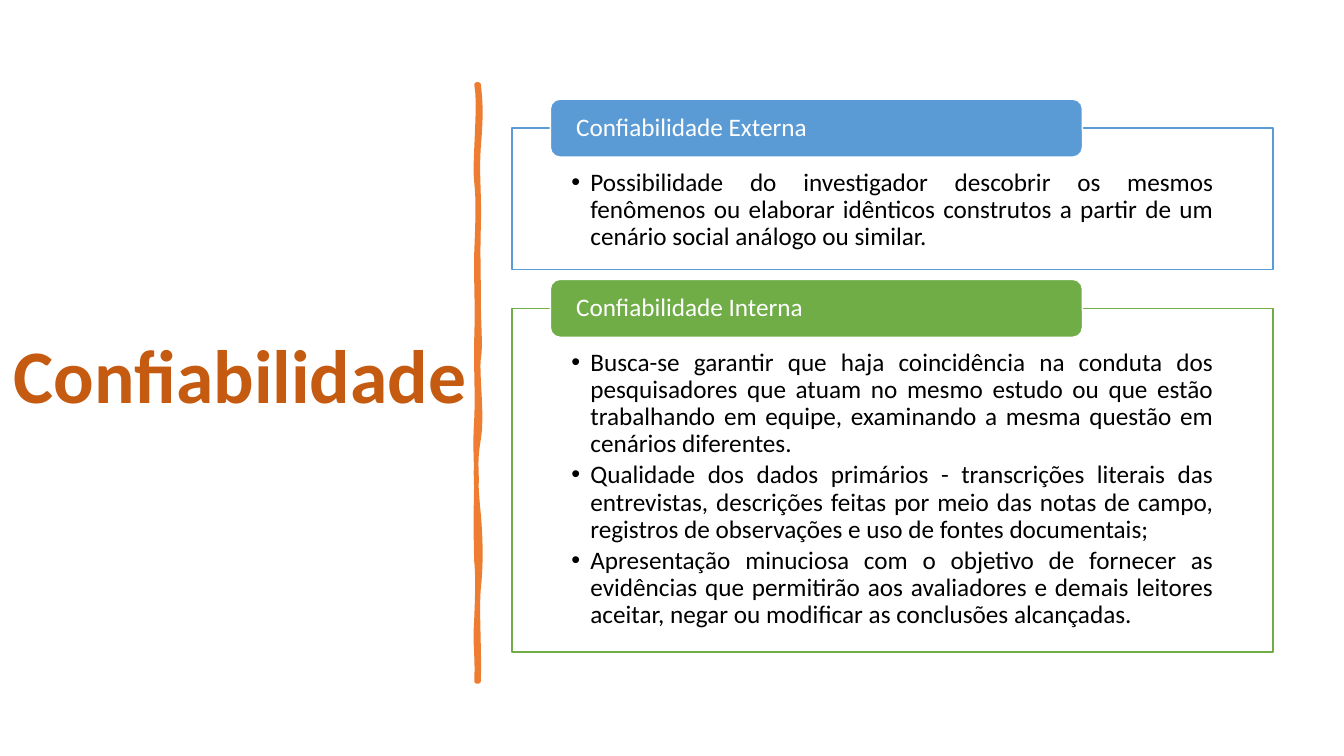
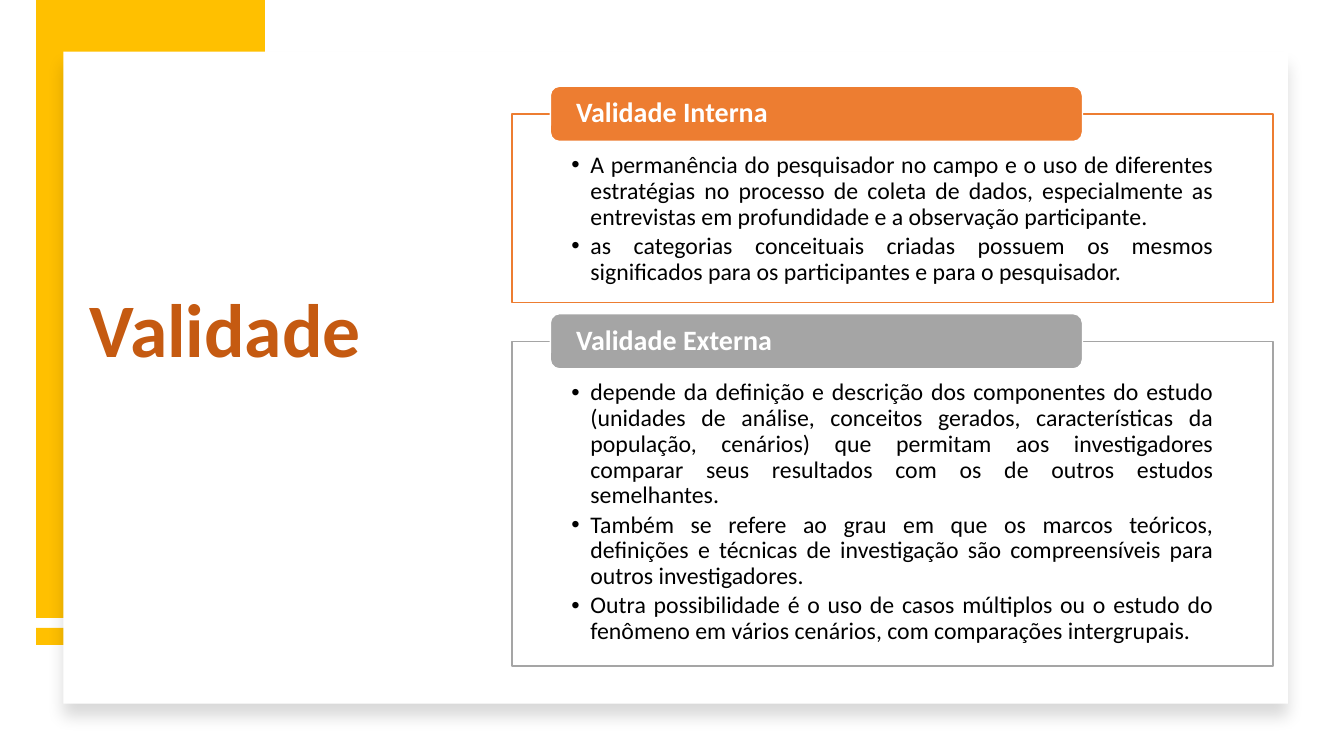
from lxml import etree
from pptx import Presentation
from pptx.dml.color import RGBColor
from pptx.enum.shapes import MSO_SHAPE
from pptx.enum.text import MSO_ANCHOR, PP_ALIGN
from pptx.oxml.ns import qn
from pptx.util import Cm, Pt

RECT, ROUNDED = MSO_SHAPE.RECTANGLE, MSO_SHAPE.ROUNDED_RECTANGLE
TOP, MIDDLE = MSO_ANCHOR.TOP, MSO_ANCHOR.MIDDLE
LEFT, JUSTIFY = PP_ALIGN.LEFT, PP_ALIGN.JUSTIFY

FONT = "Calibri"
WHITE, BLACK = "FFFFFF", "000000"
TITLE_COLOR = "C55A11"
ORANGE, BLUE, GREEN, GRAY, GOLD = "ED7D31", "5B9BD5", "70AD47", "A5A5A5", "FFC000"

# Panel geometry in centimetres
PANEL_LEFT, PANEL_WIDTH, PANEL_GAP = 12.9, 19.18, 0.98
LABEL_LEFT, LABEL_WIDTH = 13.87, 13.41

# Bézier control points (x, y) of the two edges of the brush stroke
STROKE_RIGHT = [
    (12.06, 2.13), (12.12, 2.59), (12.12, 3.02), (12.06, 3.71), (12.01, 4.39),
    (12.09, 4.95), (12.06, 5.74), (12.04, 6.53), (12.06, 6.65), (12.06, 7.47),
    (12.06, 8.26), (12.12, 8.69), (12.06, 9.04), (12.01, 9.4), (12.17, 10.52),
    (12.06, 11.07), (11.96, 11.61), (11.99, 12.29), (12.06, 12.95), (12.12, 13.61),
    (12.12, 14.33), (12.06, 14.83), (12.01, 15.32), (12.09, 16.51), (12.06, 17.17),
]
STROKE_LEFT = [
    (12.01, 17.17), (12.04, 16.41), (11.96, 16.36), (12.01, 15.57), (12.04, 14.81),
    (12.04, 14.48), (12.01, 14.15), (11.99, 13.82), (11.99, 12.57), (12.01, 12.12),
    (12.01, 11.66), (11.96, 11.3), (12.01, 10.54), (12.04, 9.8), (11.99, 9.47),
    (12.01, 8.51), (12.04, 7.57), (11.99, 7.14), (12.01, 6.35), (12.04, 5.54),
    (12.06, 5.08), (12.01, 4.6), (11.94, 4.14), (12.12, 2.64), (12.01, 2.13),
]


def rgb(value):
    return RGBColor.from_string(value)


def curve_points(controls, steps=8):
    """Points along a chain of cubic Bézier curves."""
    points = [controls[0]]
    for start in range(0, len(controls) - 1, 3):
        a, b, c, d = controls[start:start + 4]
        for step in range(1, steps + 1):
            t = step / steps
            weights = ((1 - t) ** 3, 3 * t * (1 - t) ** 2, 3 * t * t * (1 - t), t ** 3)
            points.append(tuple(
                sum(w * p[axis] for w, p in zip(weights, (a, b, c, d)))
                for axis in (0, 1)))
    return points


def write(shape, paragraphs, size, color=BLACK, bold=False, align=LEFT,
          anchor=MIDDLE, insets=(0.25, 0.13, 0.25, 0.13), after=0, bullet=False):
    frame = shape.text_frame
    frame.word_wrap = True
    frame.vertical_anchor = anchor
    (frame.margin_left, frame.margin_top,
     frame.margin_right, frame.margin_bottom) = map(Cm, insets)
    for index, text in enumerate(paragraphs):
        paragraph = frame.add_paragraph() if index else frame.paragraphs[0]
        paragraph.alignment = align
        paragraph.line_spacing = 0.9
        paragraph.space_after = Pt(after)
        run = paragraph.add_run()
        run.text = text
        run.font.name = FONT
        run.font.size = Pt(size)
        run.font.bold = bold
        run.font.color.rgb = rgb(color)
        if bullet:
            properties = paragraph.alignment is not None and run._r.getparent().get_or_add_pPr()
            properties.set("marL", str(Cm(0.48)))
            properties.set("indent", str(-Cm(0.48)))
            etree.SubElement(properties, qn("a:buFont"), typeface="Arial")
            etree.SubElement(properties, qn("a:buChar"), char="•")


class Deck:
    def __init__(self):
        self.presentation = Presentation()
        self.presentation.slide_width = Cm(33.87)
        self.presentation.slide_height = Cm(19.05)
        self.slide = None

    def new_slide(self):
        self.slide = self.presentation.slides.add_slide(self.presentation.slide_layouts[6])

    def style(self, shape, fill, line=None, width=1):
        shape.shadow.inherit = False
        shape.fill.solid()
        shape.fill.fore_color.rgb = rgb(fill)
        if line:
            shape.line.color.rgb = rgb(line)
            shape.line.width = Pt(width)
        else:
            shape.line.fill.background()
        return shape

    def block(self, left, top, width, height, fill, line=None, kind=RECT):
        shape = self.slide.shapes.add_shape(kind, Cm(left), Cm(top), Cm(width), Cm(height))
        return self.style(shape, fill, line)

    def title(self, text, left, top, width, height):
        box = self.slide.shapes.add_textbox(Cm(left), Cm(top), Cm(width), Cm(height))
        write(box, [text], 54, color=TITLE_COLOR, bold=True)

    def card(self, left, top, width, height):
        card = self.block(left, top, width, height, WHITE)
        effects = card._element.spPr.find(qn("a:effectLst"))
        shadow = etree.SubElement(effects, qn("a:outerShdw"), blurRad=str(Pt(11)),
                                  dist=str(Pt(10)), dir="5400000", rotWithShape="0")
        color = etree.SubElement(shadow, qn("a:srgbClr"), val=BLACK)
        etree.SubElement(color, qn("a:alpha"), val="15000")

    def brush_stroke(self):
        start, *rest = [(Cm(x), Cm(y)) for x, y in
                        curve_points(STROKE_RIGHT) + curve_points(STROKE_LEFT)]
        builder = self.slide.shapes.build_freeform(*start, scale=1.0)
        builder.add_line_segments(rest, close=True)
        self.style(builder.convert_to_shape(), ORANGE, ORANGE, 3.25)

    def panels(self, top, label_height, label_size, body_size, label_bold, sections):
        """Stack framed panels, each label centred on its frame's top edge."""
        for heading, color, height, points in sections:
            frame = self.block(PANEL_LEFT, top, PANEL_WIDTH, height, WHITE, color)
            solid = frame._element.spPr.find(qn("a:solidFill"))
            etree.SubElement(solid[0], qn("a:alpha"), val="90000")
            write(frame, points, body_size, align=JUSTIFY, anchor=TOP, bullet=True,
                  insets=(1.5, 0.71 * label_height, 1.5, 0.34), after=0.15 * body_size)
            label = self.block(LABEL_LEFT, top - label_height / 2, LABEL_WIDTH,
                               label_height, color, WHITE, ROUNDED)
            write(label, [heading], label_size, color=WHITE, bold=label_bold,
                  insets=(0.58, 0, 0.58, 0))
            top += height + PANEL_GAP


def reliability(deck):
    deck.new_slide()
    deck.title("Confiabilidade", 0.1, 1.78, 12.27, 15.52)
    deck.brush_stroke()
    deck.panels(3.23, 1.46, 18, 18, False, [
        ("Confiabilidade Externa", BLUE, 3.56, [
            "Possibilidade do investigador descobrir os mesmos fenômenos ou elaborar "
            "idênticos construtos a partir de um cenário social análogo ou similar.",
        ]),
        ("Confiabilidade Interna", GREEN, 8.66, [
            "Busca-se garantir que haja coincidência na conduta dos pesquisadores que "
            "atuam no mesmo estudo ou que estão trabalhando em equipe, examinando a "
            "mesma questão em cenários diferentes.",
            "Qualidade dos dados primários - transcrições literais das entrevistas, "
            "descrições feitas por meio das notas de campo, registros de observações e "
            "uso de fontes documentais;",
            "Apresentação minuciosa com o objetivo de fornecer as evidências que "
            "permitirão aos avaliadores e demais leitores aceitar, negar ou modificar "
            "as conclusões alcançadas.",
        ]),
    ])


def validity(deck):
    deck.new_slide()
    # Gold corner behind the white card
    deck.block(0.91, 15.82, 5.77, 0.43, GOLD)
    deck.block(0.91, 0, 5.77, 15.57, GOLD)
    deck.card(1.6, 1.3, 30.86, 16.43)
    deck.panels(2.87, 1.39, 20, 17, True, [
        ("Validade Interna", ORANGE, 4.75, [
            "A permanência do pesquisador no campo e o uso de diferentes estratégias no "
            "processo de coleta de dados, especialmente as entrevistas em profundidade "
            "e a observação participante.",
            "as categorias conceituais criadas possuem os mesmos significados para os "
            "participantes e para o pesquisador.",
        ]),
        ("Validade Externa", GRAY, 8.18, [
            "depende da definição e descrição dos componentes do estudo (unidades de "
            "análise, conceitos gerados, características da população, cenários) que "
            "permitam aos investigadores comparar seus resultados com os de outros "
            "estudos semelhantes.",
            "Também se refere ao grau em que os marcos teóricos, definições e técnicas "
            "de investigação são compreensíveis para outros investigadores.",
            "Outra possibilidade é o uso de casos múltiplos ou o estudo do fenômeno em "
            "vários cenários, com comparações intergrupais.",
        ]),
    ])
    deck.title("Validade", 2.01, 1.88, 11.13, 13)


def main():
    deck = Deck()
    reliability(deck)
    validity(deck)
    deck.presentation.save("out.pptx")


if __name__ == "__main__":
    main()
